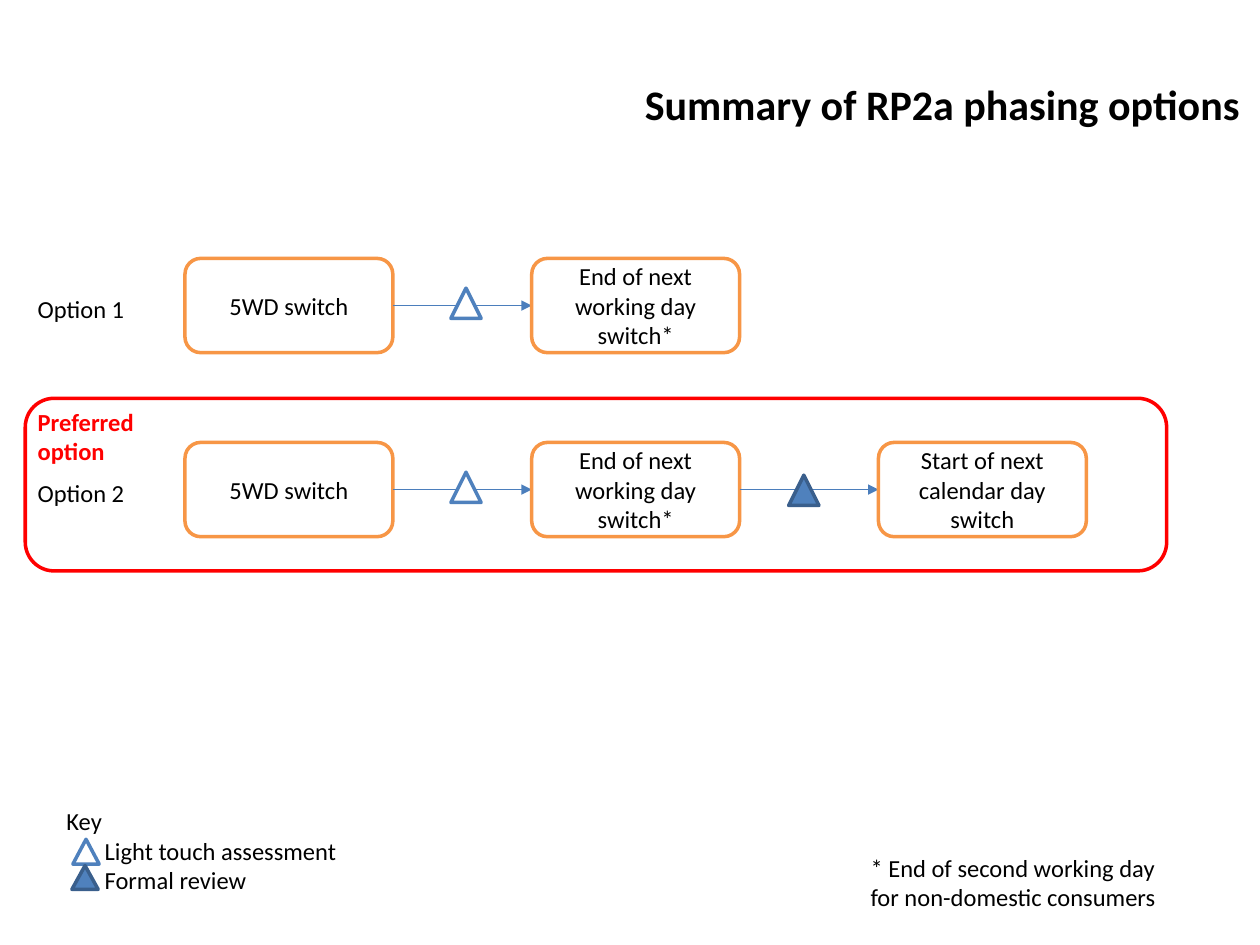
import lxml.etree
import pptx
import pptx.dml.color
import pptx.enum.shapes
import pptx.enum.text
import pptx.oxml.ns
import pptx.util

Cm = pptx.util.Cm
Shape = pptx.enum.shapes.MSO_SHAPE
Align = pptx.enum.text.PP_ALIGN
Anchor = pptx.enum.text.MSO_ANCHOR
qn = pptx.oxml.ns.qn

BOX_LEFT, BOX_STEP, BOX_WIDTH, BOX_HEIGHT = 3.73, 6.99, 4.19, 1.9
MARKER_SIZE = 0.61
NEXT_DAY = "End of next working day switch*"
OPTIONS = [
    ("Option 1", 5.21, ["5WD switch", NEXT_DAY]),
    ("Option 2", 8.92, ["5WD switch", NEXT_DAY, "Start of next calendar day switch"]),
]


def color(value):
    return pptx.dml.color.RGBColor.from_string(value)


def write(para, text, size=14, ink="000000", bold=False, align=Align.LEFT, indent=0):
    para.alignment = align
    if indent:
        para._p.get_or_add_pPr().set("marL", str(Cm(indent)))
    span = para.add_run()
    span.text = text
    span.font.name = "Calibri"
    span.font.size = pptx.util.Pt(size)
    span.font.bold = bold
    span.font.color.rgb = color(ink)


class Painter:
    orange = "F79646"
    blue = "4F81BD"
    dark_blue = "3A5F8C"
    arrow_blue = "4B7EBC"
    red = "FF0000"
    white = "FFFFFF"

    def __init__(self, page):
        self.page = page

    def title(self, text, *place):
        box = self.page.shapes.title
        box.left, box.top, box.width, box.height = map(Cm, place)
        box.text_frame.vertical_anchor = Anchor.TOP
        write(box.text_frame.paragraphs[0], text, size=24, bold=True, align=Align.RIGHT)

    def text(self, lines, *place, indent=0, **style):
        frame = self.page.shapes.add_textbox(*map(Cm, place)).text_frame
        frame.word_wrap = True
        for index, line in enumerate(lines):
            para = frame.add_paragraph() if index else frame.paragraphs[0]
            write(para, line, indent=indent if index else 0, **style)

    def shape(self, kind, *place, fill=None, line=orange, text=None):
        box = self.page.shapes.add_shape(kind, *map(Cm, place))
        box.shadow.inherit = False
        if fill:
            box.fill.solid()
            box.fill.fore_color.rgb = color(fill)
        else:
            box.fill.background()
        box.line.color.rgb = color(line)
        box.line.width = pptx.util.Pt(2)
        if text:
            box.text_frame.word_wrap = True
            box.text_frame.vertical_anchor = Anchor.MIDDLE
            write(box.text_frame.paragraphs[0], text, align=Align.CENTER)

    def arrow(self, start, end, top):
        arrow = self.page.shapes.add_connector(
            pptx.enum.shapes.MSO_CONNECTOR.STRAIGHT, Cm(start), Cm(top), Cm(end), Cm(top))
        arrow.line.color.rgb = color(self.arrow_blue)
        arrow.line.width = pptx.util.Pt(0.75)
        lxml.etree.SubElement(arrow.line._get_or_add_ln(), qn("a:tailEnd"), type="triangle")
        lxml.etree.SubElement(arrow._element.spPr, qn("a:effectLst"))

    def assessment(self, *place):
        self.shape(Shape.ISOSCELES_TRIANGLE, *place, fill=self.white, line=self.blue)

    def review(self, *place):
        self.shape(Shape.ISOSCELES_TRIANGLE, *place, fill=self.blue, line=self.dark_blue)

    def option(self, label, top, stages):
        self.text([label], 0.51, top + 0.6, 4.19, 0.86)
        for index, stage in enumerate(stages):
            left = BOX_LEFT + index * BOX_STEP
            if index:
                self.arrow(left - BOX_STEP + BOX_WIDTH, left, top + BOX_HEIGHT / 2)
            self.shape(Shape.ROUNDED_RECTANGLE, left, top, BOX_WIDTH, BOX_HEIGHT,
                       fill=self.white, text=stage)
        self.assessment(9.09, top + 0.6, MARKER_SIZE, MARKER_SIZE)


def main():
    deck = pptx.Presentation()
    deck.slide_width, deck.slide_height = Cm(25.4), Cm(19.05)
    page = deck.slides.add_slide(deck.slide_layouts[5])
    painter = Painter(page)

    painter.title("Summary of RP2a phasing options", 8.18, 1.45, 17.07, 1.27)
    for option in OPTIONS:
        painter.option(*option)
    painter.review(15.9, 9.58, MARKER_SIZE, MARKER_SIZE)

    painter.shape(Shape.ROUNDED_RECTANGLE, 0.51, 8.03, 23.01, 3.48, line=painter.red)
    painter.text(["Preferred option"], 0.51, 8.08, 3.81, 1.45, ink=painter.red, bold=True)

    painter.assessment(1.47, 16.92, 0.53, 0.5)
    painter.text(["Key", "Light touch assessment", "Formal review"],
                 1.09, 16.13, 6.81, 2.06, indent=0.77)
    painter.review(1.45, 17.45, 0.53, 0.48)
    painter.text(["* End of second working day for non-domestic consumers"],
                 17.3, 17.07, 6.81, 1.45)
    deck.save("out.pptx")


if __name__ == "__main__":
    main()
